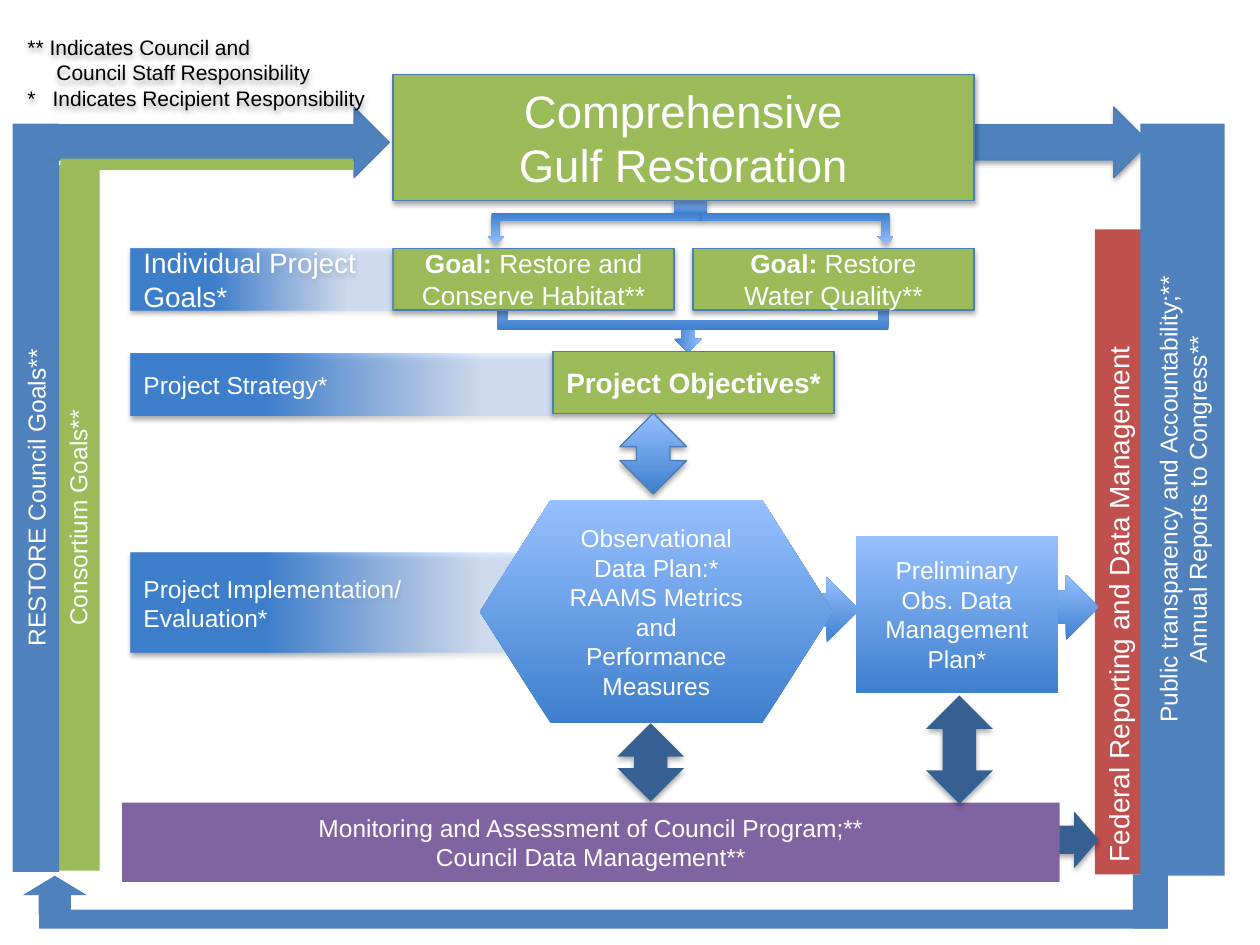
from lxml.etree import SubElement
from pptx import Presentation
from pptx.dml.color import RGBColor
from pptx.enum.shapes import MSO_SHAPE as S
from pptx.enum.text import MSO_ANCHOR, MSO_AUTO_SIZE, PP_ALIGN
from pptx.oxml import parse_xml
from pptx.oxml.ns import nsdecls, qn
from pptx.util import Inches, Pt

THEME = {
    "font": "Arial",
    "white": "FFFFFF", "black": "000000", "outline": "4A7DBA",
    "blue": "4F81BD", "green": "9BBB59", "red": "C0504D",
    "purple": "8064A2", "navy": "366092",
    # Gradients: angle, then (position, colour, opacity) in percent
    "glossy": (270, [(0, "3E7FCD", 100), (100, "96C0FF", 100)]),
    "fade": (0, [(0, "3E7FCD", 100), (32, "3E7FCD", 100),
                 (83, "96C0FF", 29), (100, "96C0FF", 29)]),
    "title": 26, "large": 16, "goal": 15, "body": 14, "legend": 12,
}

# Looks shared by several parts
RAISED = {"outline": True, "shadow": True}
GREEN_BOX = {"fill": "green", **RAISED}
FADE_LABEL = {"fill": "fade", "shadow": True, "align": PP_ALIGN.LEFT}
UPRIGHT = {"turn": 270}
NAVY_ARROW = {"fill": "navy", "shadow": True}

LABEL_X, GOAL_Y, BOX_W, BOX_H = 1.04, 1.97, 2.23, 0.49
TITLE_X, TITLE_W = 3.12, 4.61
TITLE_BOX = (TITLE_X, 0.59, TITLE_W, 1)
GOAL_XS = (TITLE_X, TITLE_X + TITLE_W - BOX_W)
CENTRE_X = 5.57                     # where the branches meet
BRANCHES = ((3.87, 1.70), (CENTRE_X, 1.52))

TITLE = ["Comprehensive", "Gulf Restoration"]
GOALS = ["Restore and Conserve Habitat**", "Restore\vWater Quality**"]
LEGEND = ["** Indicates Council and", "Council Staff Responsibility",
          "*\tIndicates Recipient Responsibility"]
LEGEND_INDENTS = [(0, 0), (0.23, 0), (0.2, -0.2)]   # left margin, first line

# Parts from back to front: preset, visible box, look
BEHIND_TITLE = [
    (S.RIGHT_ARROW, (7.48, 0.85, 1.64, 0.56), {"fill": "blue", **RAISED}),
    (S.RIGHT_ARROW, (5.35, 2.55, 0.22, 0.25), {"fill": "glossy", "turn": 90}),
    (S.RIGHT_ARROW, (5.57, 4.58, 1.25, 0.52), {"fill": "glossy"}),
    (S.RECTANGLE, (LABEL_X, 4.39, 3.35, 0.79),
     {**FADE_LABEL, "lines": ["Project Implementation/", "Evaluation*"]}),
    (S.RECTANGLE, (5.35, 1.58, 0.26, 0.12), {"fill": "glossy", "shadow": True}),
]
# Branches rising from the goals to the objectives, then down from the title
JOINS = [(S.BENT_UP_ARROW, (x + shift, 2.31, width, 0.31),
          {"fill": "glossy", "flip": flip})
         for (x, width), shift, flip in zip(BRANCHES, (0.04, 0), (True, False))]
SPLITS = [(S.BENT_UP_ARROW, (x, 1.69, width, 0.25),
           {"fill": "glossy", "shadow": True, "turn": 180, "flip": flip})
          for (x, width), flip in zip(BRANCHES, (False, True))]
GOAL_BOXES = [(S.RECTANGLE, (x, GOAL_Y, BOX_W, BOX_H),
               {**GREEN_BOX, "lines": [goal], "lead": "Goal: ", "size": "goal"})
              for x, goal in zip(GOAL_XS, GOALS)]
IN_FRONT = [
    (S.RECTANGLE, (LABEL_X, GOAL_Y, 2.08, BOX_H),
     {**FADE_LABEL, "lines": ["Individual Project Goals*"], "size": "large"}),
    (S.RECTANGLE, (LABEL_X, 2.81, 3.35, BOX_H),
     {**FADE_LABEL, "lines": ["Project Strategy*"]}),
    (S.RECTANGLE, (4.39, 2.79, BOX_W, BOX_H),
     {**GREEN_BOX, "lines": ["Project Objectives*"], "size": "large",
      "bold": True}),
    (S.RECTANGLE, (8.69, 1.82, 0.37, 5.12),
     {"fill": "red", **UPRIGHT, "size": "large", "align": PP_ALIGN.LEFT,
      "lines": ["Federal Reporting and Data Management"]}),
    (S.FLOWCHART_PREPARATION, (3.81, 3.97, 2.8, 1.77),
     {"fill": "glossy", "lines": [
         "Observational Data Plan:* RAAMS Metrics and Performance Measures"]}),
    (S.RIGHT_ARROW, (7.33, 4.56, 1.39, 0.52), {"fill": "glossy"}),
    (S.RECTANGLE, (0.44, 1.31, 0.35, 5.6),
     {"fill": "green", **UPRIGHT, "lines": ["Consortium Goals**"]}),
    (S.UP_DOWN_ARROW, (4.92, 3.28, 0.53, 0.64), {"fill": "glossy", **RAISED}),
    (S.RECTANGLE, (0.1, 0.98, 0.37, 5.94),
     {"fill": "blue", **UPRIGHT, "lines": ["RESTORE Council Goals**"]}),
    (S.RECTANGLE, (9.05, 0.98, 0.67, 5.97),
     {"fill": "blue", **UPRIGHT,
      "lines": ["Public transparency and Accountability;**",
                "Annual Reports to Congress**"]}),
    # Feedback path along the bottom
    (S.UP_ARROW, (0.18, 6.95, 0.51, 0.31), {"fill": "blue"}),
    (S.RECTANGLE, (0.31, 7.22, 8.95, 0.15), {"fill": "blue"}),
    (S.RIGHT_ARROW, (0.35, 0.85, 2.74, 0.56), {"fill": "blue", "outline": True}),
    (S.RECTANGLE, (6.79, 4.25, 1.61, 1.25),
     {"fill": "glossy", "lines": ["Preliminary Obs. Data Management Plan*"]}),
    (S.RECTANGLE, (0.48, 1.26, 2.32, 0.09), {"fill": "green"}),
    (S.UP_DOWN_ARROW, (4.9, 5.74, 0.53, 0.62), NAVY_ARROW),
    (S.RECTANGLE, (8.99, 6.94, 0.28, 0.43), {"fill": "blue"}),
    (S.UP_ARROW, (8.33, 6.44, 0.39, 0.45), {**NAVY_ARROW, "turn": 90}),
    (S.RECTANGLE, (0.97, 6.37, 7.44, 0.63),
     {"fill": "purple",
      "lines": ["Monitoring and Assessment of Council Program;**",
                "Council Data Management**"]}),
    (S.UP_DOWN_ARROW, (7.35, 5.52, 0.53, 0.86), NAVY_ARROW),
]


def colour(name):
    return RGBColor.from_string(THEME[name])


def write(shape, lines, size="body", color="white", align=PP_ALIGN.CENTER,
          bold=False, lead="", indents=None):
    frame = shape.text_frame
    frame.word_wrap = True
    frame.auto_size = MSO_AUTO_SIZE.NONE
    frame.vertical_anchor = MSO_ANCHOR.MIDDLE
    for index, line in enumerate(lines):
        paragraph = frame.paragraphs[0] if index == 0 else frame.add_paragraph()
        paragraph.alignment = align
        if indents:
            margin, first = indents[index]
            properties = paragraph._p.get_or_add_pPr()
            properties.set("marL", str(Inches(margin)))
            properties.set("indent", str(Inches(first)))
        if lead:
            paragraph.add_run().text = lead
        for part, piece in enumerate(line.split("\v")):
            if part:
                paragraph.add_line_break()
            paragraph.add_run().text = piece
        for number, run in enumerate(paragraph.runs):
            run.font.name = THEME["font"]
            run.font.size = Pt(THEME[size])
            run.font.bold = bold or bool(lead and number == 0)
            run.font.color.rgb = colour(color)


def cast_shadow(shape):
    shape.shadow.inherit = False
    effects = shape._element.spPr.find(qn("a:effectLst"))
    shadow = SubElement(effects, qn("a:outerShdw"), blurRad="40000",
                        dist="23000", dir="5400000", rotWithShape="0")
    black = SubElement(shadow, qn("a:srgbClr"), val=THEME["black"])
    SubElement(black, qn("a:alpha"), val="35000")


def paint(shape, fill, outline=False, shadow=False):
    if isinstance(THEME[fill], tuple):
        angle, stops = THEME[fill]
        marks = "".join(
            f'<a:gs pos="{pos * 1000}"><a:srgbClr val="{rgb}">'
            f'<a:alpha val="{alpha * 1000}"/></a:srgbClr></a:gs>'
            for pos, rgb, alpha in stops)
        shape._element.spPr.find(qn("a:prstGeom")).addnext(parse_xml(
            f'<a:gradFill {nsdecls("a")} rotWithShape="1"><a:gsLst>{marks}'
            f'</a:gsLst><a:lin ang="{angle * 60000}" scaled="0"/></a:gradFill>'))
    else:
        shape.fill.solid()
        shape.fill.fore_color.rgb = colour(fill)
    if outline:
        shape.line.color.rgb = colour("outline")
        shape.line.width = Pt(0.75)
    else:
        shape.line.fill.background()
    if shadow:
        cast_shadow(shape)
    else:
        shape.shadow.inherit = False


def add_part(slide, preset, box, fill, outline=False, shadow=False, turn=0,
             flip=False, lines=(), **text_format):
    x, y, w, h = box
    if turn % 180:                  # frame before a quarter turn
        x, y, w, h = x + (w - h) / 2, y + (h - w) / 2, h, w
    part = slide.shapes.add_shape(preset, *map(Inches, (x, y, w, h)))
    part.rotation = turn
    if flip:
        part._element.spPr.find(qn("a:xfrm")).set("flipH", "1")
    paint(part, fill, outline, shadow)
    if lines:
        write(part, lines, **text_format)


def main():
    deck = Presentation()
    deck.slide_width, deck.slide_height = Inches(10), Inches(7.5)
    slide = deck.slides.add_slide(deck.slide_layouts[5])

    for preset, box, look in BEHIND_TITLE + JOINS:
        add_part(slide, preset, box, **look)

    # Title box, stacked above the arrows behind it
    title = slide.shapes.title
    title.left, title.top, title.width, title.height = map(Inches, TITLE_BOX)
    paint(title, **GREEN_BOX)
    write(title, TITLE, size="title")
    slide.shapes._spTree.append(title._element)

    for preset, box, look in SPLITS + GOAL_BOXES + IN_FRONT:
        add_part(slide, preset, box, **look)

    # Legend
    legend = slide.shapes.add_textbox(*map(Inches, (0.12, 0.33, 6.37, 0.49)))
    write(legend, LEGEND, size="legend", color="black", align=PP_ALIGN.LEFT,
          indents=LEGEND_INDENTS)
    cast_shadow(legend)

    deck.save("out.pptx")


if __name__ == "__main__":
    main()
